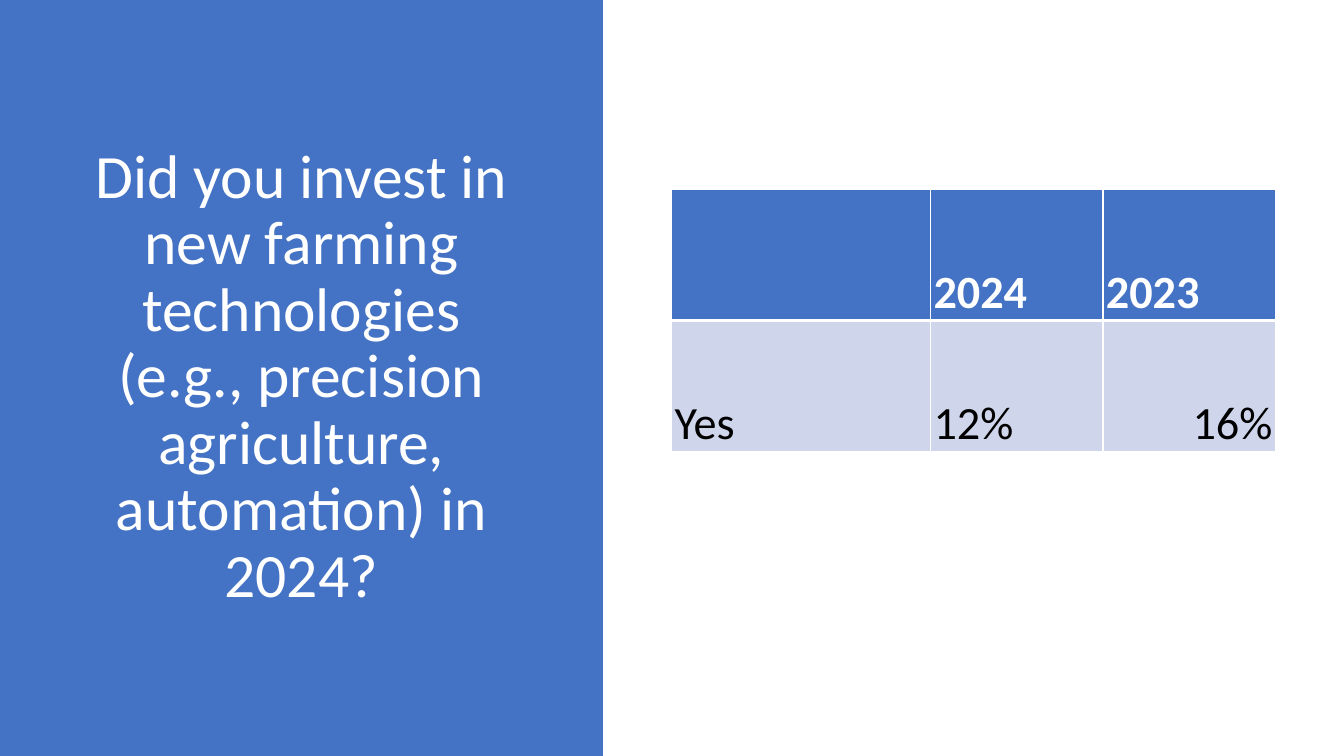
from lxml import etree
from pptx import Presentation
from pptx.dml.color import RGBColor
from pptx.enum.shapes import MSO_SHAPE
from pptx.enum.text import MSO_ANCHOR, PP_ALIGN
from pptx.oxml import parse_xml
from pptx.oxml.ns import nsdecls
from pptx.util import Inches, Pt

QUESTION = ("Did you invest in new farming technologies "
            "(e.g., precision agriculture, automation) in 2024?")
ROWS = [("", "2024", "2023"), ("Yes", "12%", "16%")]
COL_WIDTHS = (2.57, 1.71, 1.71)
ROW_HEIGHT = 1.3

BLUE = RGBColor(0x44, 0x72, 0xC4)
PALE_BLUE = RGBColor(0xCF, 0xD5, 0xEA)
WHITE = RGBColor(0xFF, 0xFF, 0xFF)
BLACK = RGBColor(0, 0, 0)
FONT = "Calibri"


def set_font(p, size, color, bold=False):
    p.font.name, p.font.size, p.font.bold = FONT, Pt(size), bold
    p.font.color.rgb = color


def set_borders(cell, widths):
    tc_pr = cell._tc.get_or_add_tcPr()
    for i, (side, width) in enumerate(widths.items()):
        ln = parse_xml(f'<a:ln{side} {nsdecls("a")} w="{Pt(width)}"><a:solidFill>'
                       f'<a:srgbClr val="{WHITE}"/></a:solidFill></a:ln{side}>')
        tc_pr.insert(i, ln)


def add_panel(s):
    panel = s.shapes.add_shape(MSO_SHAPE.RECTANGLE, 0, 0, Inches(5.98), Inches(7.5))
    panel.shadow.inherit = False
    panel.fill.solid()
    panel.fill.fore_color.rgb = BLUE
    panel.line.fill.background()
    s.shapes._spTree.insert(2, panel._element)


def add_title(s):
    title = s.shapes.title
    title.left, title.top = Inches(0.68), Inches(0.7)
    title.width, title.height = Inches(4.62), Inches(6.1)
    tf = title.text_frame
    tf.text = QUESTION
    tf.word_wrap = True
    tf.vertical_anchor = MSO_ANCHOR.MIDDLE
    p = tf.paragraphs[0]
    p.alignment, p.line_spacing = PP_ALIGN.CENTER, 0.9
    set_font(p, 44, WHITE)


def add_results(s):
    table = s.shapes.add_table(
        len(ROWS), len(COL_WIDTHS), Inches(6.66), Inches(1.88),
        Inches(sum(COL_WIDTHS)), Inches(ROW_HEIGHT * len(ROWS))).table
    for col, width in zip(table.columns, COL_WIDTHS):
        col.width = Inches(width)
    for r, values in enumerate(ROWS):
        table.rows[r].height = Inches(ROW_HEIGHT)
        header = r == 0
        for c, value in enumerate(values):
            cell = table.cell(r, c)
            cell.text = value
            cell.vertical_anchor = MSO_ANCHOR.BOTTOM
            cell.margin_left = cell.margin_right = cell.margin_top = Inches(0.03)
            cell.margin_bottom = 0
            cell.fill.solid()
            cell.fill.fore_color.rgb = BLUE if header else PALE_BLUE
            set_borders(cell, {"L": 1, "R": 1, "T": 1 if header else 3,
                               "B": 3 if header else 1})
            p = cell.text_frame.paragraphs[0]
            set_font(p, 33, WHITE if header else BLACK, header)
            if value == "16%":
                p.alignment = PP_ALIGN.RIGHT


def main():
    """Build the farming technology survey slide."""
    prs = Presentation()
    prs.slide_width, prs.slide_height = Inches(13.33), Inches(7.5)
    s = prs.slides.add_slide(prs.slide_layouts[5])
    add_panel(s)
    add_title(s)
    add_results(s)
    prs.save("out.pptx")


if __name__ == "__main__":
    main()
